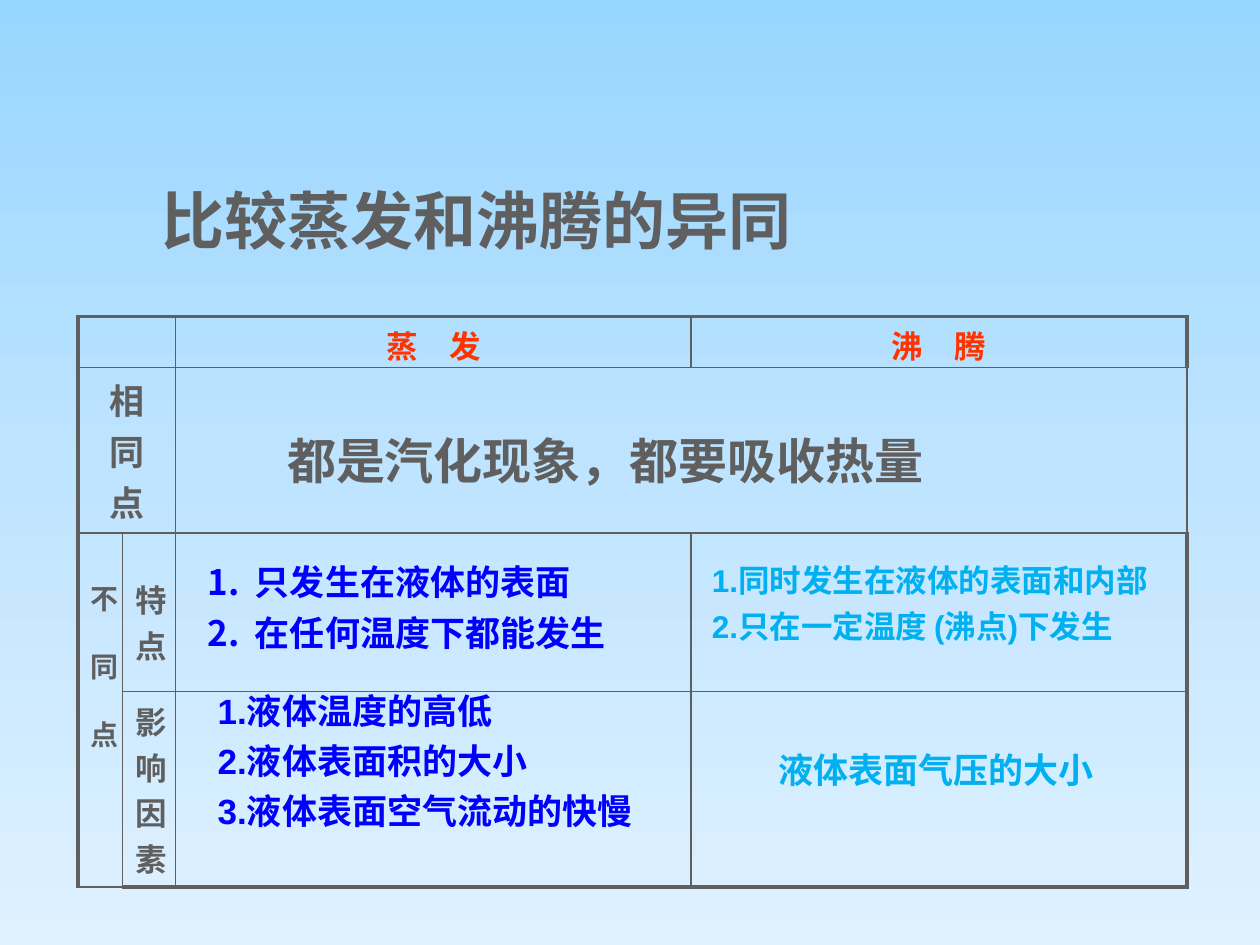
from copy import deepcopy

from pptx import Presentation
from pptx.dml.color import RGBColor
from pptx.enum.text import PP_ALIGN
from pptx.oxml.ns import qn
from pptx.util import Cm, Pt
from lxml.etree import SubElement

CENTER, LEFT = PP_ALIGN.CENTER, PP_ALIGN.LEFT
GREY = RGBColor(0x5F, 0x5F, 0x5F)
RED = RGBColor(0xFF, 0x33, 0x00)
BLUE = RGBColor(0x00, 0x00, 0xFF)
CYAN = RGBColor(0x00, 0xB0, 0xF0)
SKY = (RGBColor(0x97, 0xD6, 0xFF), RGBColor(0xBF, 0xE4, 0xFF), RGBColor(0xDF, 0xF1, 0xFF))
THIN, THICK = Pt(1), Pt(2.25)


class Deck:
    font = "Arial"
    gap = 4.7

    def __init__(self):
        self.prs = Presentation()
        self.prs.slide_width, self.prs.slide_height = Cm(25.4), Cm(19.05)
        self.s = self.prs.slides.add_slide(self.prs.slide_layouts[6])

    def background(self, colors):
        fill = self.s.background.fill
        fill.gradient()
        fill.gradient_angle = 270
        stops = self.s.element.find(".//" + qn("a:gsLst"))
        stops.insert(1, deepcopy(stops[0]))
        for i, (stop, color) in enumerate(zip(fill.gradient_stops, colors)):
            stop.position = i / (len(colors) - 1)
            stop.color.rgb = color

    def fill_text(self, tf, lines, size, color, align=LEFT, gap=0, font=font):
        tf.text = "\n".join(lines)
        for i, p in enumerate(tf.paragraphs):
            p.alignment = align
            p.space_before = Pt(gap if i else 0)
            for r in p.runs:
                r.font.name, r.font.size, r.font.bold = font, Pt(size), True
                r.font.color.rgb = color

    def text(self, x, y, w, h, lines, size, color, indent=0, numbered=False):
        tf = self.s.shapes.add_textbox(Cm(x), Cm(y), Cm(w), Cm(h)).text_frame
        tf.word_wrap = True
        self.fill_text(tf, lines, size, color, gap=self.gap)
        for p in tf.paragraphs:
            pPr = p._p.get_or_add_pPr()
            pPr.set("marL", str(Cm(indent)))
            if numbered:
                pPr.set("indent", str(-Cm(indent)))
                SubElement(pPr, qn("a:buAutoNum"), type="arabicPeriod")

    def border(self, cell, side, width):
        ln = SubElement(cell._tc.get_or_add_tcPr(), qn("a:ln" + side), w=str(width))
        fill = SubElement(ln, qn("a:solidFill"))
        SubElement(fill, qn("a:srgbClr"), val=str(GREY))

    def table(self, x, y, cols, rows, merges):
        frame = self.s.shapes.add_table(len(rows), len(cols), Cm(x), Cm(y),
                                        Cm(sum(cols)), Cm(sum(rows)))
        tbl = frame.table
        tbl.first_row = tbl.horz_banding = False
        for col, w in zip(tbl.columns, cols):
            col.width = Cm(w)
        for row, h in zip(tbl.rows, rows):
            row.height = Cm(h)
        for i in range(len(rows)):
            for j in range(len(cols)):
                cell = tbl.cell(i, j)
                edges = {"L": j == 0, "R": j == len(cols) - 1,
                         "T": i == 0, "B": i == len(rows) - 1}
                for side, outer in edges.items():
                    self.border(cell, side, THICK if outer else THIN)
                cell.fill.background()
        for start, end in merges:
            tbl.cell(*start).merge(tbl.cell(*end))
        return tbl

    def cell(self, cell, lines, size, color=GREY, top=0.13, bottom=0.13, gap=0):
        cell.margin_top, cell.margin_bottom = Cm(top), Cm(bottom)
        self.fill_text(cell.text_frame, lines, size, color, CENTER, gap, "Calibri")


def main():
    d = Deck()
    d.background(SKY)

    tbl = d.table(1.57, 6.38, (0.9, 1.07, 10.39, 10), (1.02, 3.12, 3.2, 3.94),
                  [((0, 0), (0, 1)), ((1, 0), (1, 1)), ((1, 2), (1, 3)), ((2, 0), (3, 0))])
    for j, heading in enumerate(("蒸　发", "沸　腾"), 2):
        d.cell(tbl.cell(0, j), [heading], 18, RED, top=0.1, bottom=0)
    d.cell(tbl.cell(1, 0), "相同点", 20)
    d.cell(tbl.cell(2, 0), "不同点", 16, top=0.89, gap=15.7)
    d.cell(tbl.cell(2, 1), "特点", 18, top=0.87)
    d.cell(tbl.cell(3, 1), ["影响", "因素"], 18)

    d.text(3, 3.53, 13.79, 1.8, ["比较蒸发和沸腾的异同"], 36, GREY)
    d.text(5.54, 8.56, 15.24, 1.45, ["都是汽化现象，都要吸收热量"], 28, GREY)
    d.text(3.94, 11.18, 10.16, 2.36, ["只发生在液体的表面", "在任何温度下都能发生"],
           20, BLUE, indent=0.95, numbered=True)
    d.text(14.1, 11.18, 9.53, 2.16,
           ["1.同时发生在液体的表面和内部", "2.只在一定温度 (沸点)下发生"], 18, CYAN)
    d.text(4.14, 13.77, 9.4, 3.63,
           ["1.液体温度的高低", "2.液体表面积的大小", "3.液体表面空气流动的快慢"], 20, BLUE)
    d.text(14.73, 14.96, 8, 1.09, ["液体表面气压的大小"], 20, CYAN, indent=0.71)

    d.prs.save("out.pptx")


if __name__ == "__main__":
    main()
